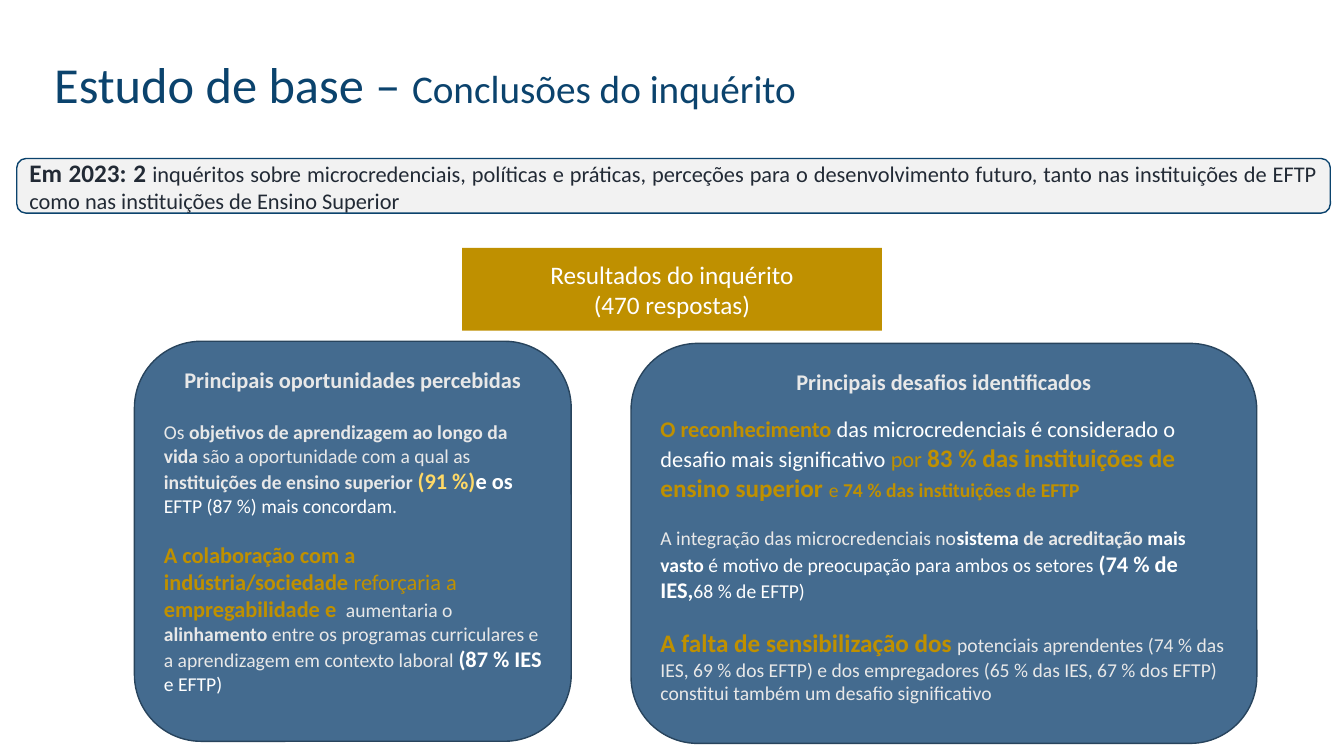
from dataclasses import dataclass

import lxml.etree
import pptx
import pptx.dml.color
import pptx.enum.shapes
import pptx.enum.text
import pptx.oxml.ns
import pptx.util

PX = 9525  # EMU per px, slide of 1280 x 720 px
FONT = "Calibri"
NAVY, GOLD, YELLOW = "0B436D", "BF9000", "FFD966"
WHITE, PALE, INK = "FFFFFF", "E8E8E8", "222A35"
STEEL, EDGE, MIST = "1F4E79", "28445D", "F2F2F2"
ALIGN = pptx.enum.text.PP_ALIGN
ANCHOR = pptx.enum.text.MSO_ANCHOR
SHAPE = pptx.enum.shapes.MSO_SHAPE


@dataclass
class Run:
    text: str
    size: int = 14
    color: str = PALE
    bold: bool = False


@dataclass
class Para:
    runs: list[Run]
    align: ALIGN = ALIGN.LEFT
    before: float = 0


@dataclass
class Box:
    kind: SHAPE
    at: tuple[int, int, int, int]
    fill: str
    paras: list[Para]
    line: str = ""
    alpha: int = 100
    anchor: ANCHOR = ANCHOR.MIDDLE


def rgb(color: str) -> pptx.dml.color.RGBColor:
    return pptx.dml.color.RGBColor.from_string(color)


def place(s, at: tuple[int, int, int, int]) -> None:
    s.left, s.top, s.width, s.height = (v * PX for v in at)


def write(tf, paras: list[Para], anchor: ANCHOR) -> None:
    tf.word_wrap = True
    tf.auto_size = pptx.enum.text.MSO_AUTO_SIZE.NONE
    tf.vertical_anchor = anchor
    for i, para in enumerate(paras):
        p = tf.add_paragraph() if i else tf.paragraphs[0]
        p.alignment = para.align
        if para.before:
            p.space_before = pptx.util.Pt(para.before)
        for run in para.runs:
            r = p.add_run()
            r.text = run.text
            r.font.name = FONT
            r.font.size = pptx.util.Pt(run.size)
            r.font.bold = run.bold
            r.font.color.rgb = rgb(run.color)


def add_box(slide, box: Box) -> None:
    s = slide.shapes.add_shape(box.kind, *(v * PX for v in box.at))
    s.shadow.inherit = False
    s.fill.solid()
    s.fill.fore_color.rgb = rgb(box.fill)
    if box.alpha < 100:
        color = s.fill._xPr.find(".//" + pptx.oxml.ns.qn("a:srgbClr"))
        alpha = lxml.etree.SubElement(color, pptx.oxml.ns.qn("a:alpha"))
        alpha.set("val", str(box.alpha * 1000))
    if box.line:
        s.line.color.rgb = rgb(box.line)
        s.line.width = pptx.util.Pt(1)
    else:
        s.line.fill.background()
    write(s.text_frame, box.paras, box.anchor)


def card(at: tuple[int, int, int, int], heading: str, body: list[Para]) -> Box:
    head = Para([Run(heading, 16, bold=True)], ALIGN.CENTER)
    return Box(SHAPE.ROUNDED_RECTANGLE, at, STEEL, [head, *body],
               EDGE, 83, ANCHOR.TOP)


# Content
TITLE = Para([Run("Estudo de base – ", 36, NAVY),
              Run("Conclusões do inquérito", 28, NAVY)])

BANNER = Box(SHAPE.ROUNDED_RECTANGLE, (16, 151, 1251, 52), MIST, [Para([
    Run("Em 2023: 2", 18, INK, True),
    Run(" inquéritos sobre microcredenciais, políticas e práticas, perceções para o "
        "desenvolvimento futuro, tanto nas instituições de EFTP como nas instituições "
        "de Ensino Superior", 16, INK),
], ALIGN.JUSTIFY)], NAVY)

RESULTS = Box(SHAPE.RECTANGLE, (440, 236, 400, 79), GOLD, [
    Para([Run(text, 18, WHITE)], ALIGN.CENTER)
    for text in ("Resultados do inquérito", "(470 respostas)")])

OPPORTUNITIES = card((128, 325, 416, 381), "Principais oportunidades percebidas", [
    Para([
        Run("Os "),
        Run("objetivos de aprendizagem ao longo da vida", bold=True),
        Run(" são a oportunidade com a qual as "),
        Run("instituições de ensino superior ", bold=True),
        Run("(91 %)", 16, YELLOW, True),
        Run("e os ", 16, WHITE, True),
        Run("EFTP (87 %) mais concordam.", color=WHITE),
    ], before=19.5),
    Para([
        Run("A colaboração com a indústria/sociedade", 16, GOLD, True),
        Run(" reforçaria a ", 16, GOLD),
        Run("empregabilidade e ", 16, GOLD, True),
        Run(" aumentaria o "),
        Run("alinhamento", bold=True),
        Run(" entre os programas curriculares e a aprendizagem em contexto laboral "),
        Run("(87 % IES ", 16, WHITE, True),
        Run("e EFTP)", color=WHITE),
    ], before=17),
])

CHALLENGES = card((601, 327, 596, 381), "Principais desafios identificados", [
    Para([
        Run("O reconhecimento ", 16, GOLD, True),
        Run("das microcredenciais é considerado o desafio mais significativo ", 16, WHITE),
        Run("por ", 16, GOLD),
        Run("83 % das instituições de ensino superior ", 18, GOLD, True),
        Run("e ", color=GOLD),
        Run("74 % das instituições de EFTP", color=GOLD, bold=True),
    ], before=14.5),
    Para([
        Run("A integração das microcredenciais no"),
        Run("sistema ", color=WHITE, bold=True),
        Run("de acreditação ", bold=True),
        Run("mais vasto", color=WHITE, bold=True),
        Run(" é motivo de preocupação para ambos os setores ", color=WHITE),
        Run("(74 % de IES,", 16, WHITE, True),
        Run("68 % de EFTP)", color=WHITE),
    ], before=17),
    Para([
        Run("A falta de sensibilização dos", 18, GOLD, True),
        Run(" ", 16, YELLOW),
        Run("potenciais aprendentes (74 % das IES, 69 % dos EFTP) e dos empregadores "
            "(65 % das IES, 67 % dos EFTP) constitui também um desafio significativo"),
    ], before=17),
])


def main() -> None:
    prs = pptx.Presentation()
    prs.slide_width, prs.slide_height = 1280 * PX, 720 * PX
    slide = prs.slides.add_slide(prs.slide_layouts[5])

    # Title
    title = slide.shapes.title
    place(title, (42, 14, 1104, 139))
    write(title.text_frame, [TITLE], ANCHOR.MIDDLE)
    title.text_frame.paragraphs[0].line_spacing = 0.9

    # Banner, results label and the two cards
    for box in (BANNER, RESULTS, OPPORTUNITIES, CHALLENGES):
        add_box(slide, box)

    prs.save("out.pptx")


if __name__ == "__main__":
    main()
